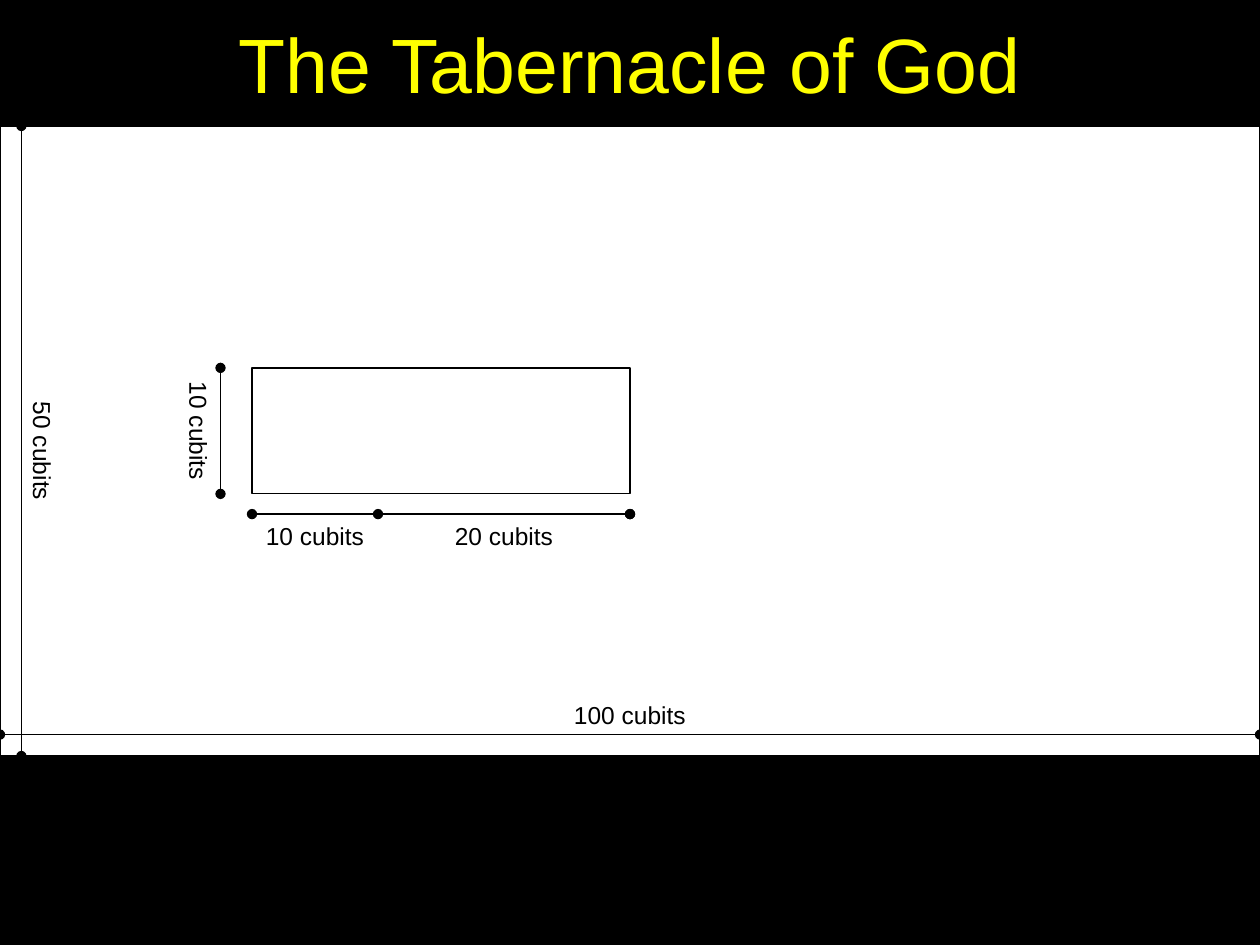
from dataclasses import dataclass

from lxml import etree
from pptx import Presentation
from pptx.dml.color import RGBColor
from pptx.enum.shapes import MSO_CONNECTOR, MSO_SHAPE
from pptx.enum.text import MSO_ANCHOR, PP_ALIGN
from pptx.oxml.ns import qn
from pptx.util import Inches, Pt

RECTANGLE = MSO_SHAPE.RECTANGLE
STRAIGHT = MSO_CONNECTOR.STRAIGHT
CENTER = PP_ALIGN.CENTER
MIDDLE = MSO_ANCHOR.MIDDLE


@dataclass(frozen=True)
class Theme:
    font: str = "Arial"
    background: RGBColor = RGBColor(0, 0, 0)
    ground: RGBColor = RGBColor(255, 255, 255)
    ink: RGBColor = RGBColor(0, 0, 0)
    title: RGBColor = RGBColor(255, 255, 0)
    title_size: int = 44
    label_size: int = 14
    line_width: float = 0.75
    label_height: float = 0.34


class Plan:
    def __init__(self, slide, theme):
        self.slide = slide
        self.theme = theme
        fill = slide.background.fill
        fill.solid()
        fill.fore_color.rgb = theme.background

    def text(self, text, left, top, width, height, size, color, rotation=0):
        sp = self.slide.shapes.add_textbox(
            Inches(left), Inches(top), Inches(width), Inches(height))
        sp.rotation = rotation
        tf = sp.text_frame
        tf.word_wrap = True
        tf.vertical_anchor = MIDDLE
        p = tf.paragraphs[0]
        p.text = text
        p.alignment = CENTER
        p.font.name = self.theme.font
        p.font.size = Pt(size)
        p.font.color.rgb = color

    def title(self, text):
        self.text(text, 0, 0, 10, 1, self.theme.title_size, self.theme.title)

    def label(self, text, center_x, center_y, width=1.0, rotation=0):
        height = self.theme.label_height
        self.text(text, center_x - width / 2, center_y - height / 2,
                  width, height, self.theme.label_size, self.theme.ink, rotation)

    def area(self, left, top, width, height, color=None):
        sp = self.slide.shapes.add_shape(
            RECTANGLE, Inches(left), Inches(top), Inches(width), Inches(height))
        sp.shadow.inherit = False
        if color is None:
            sp.fill.background()
        else:
            sp.fill.solid()
            sp.fill.fore_color.rgb = color
        self.outline(sp.line)

    def outline(self, line):
        line.color.rgb = self.theme.ink
        line.width = Pt(self.theme.line_width)

    def dimension(self, x1, y1, x2, y2):
        line = self.slide.shapes.add_connector(
            STRAIGHT, Inches(x1), Inches(y1), Inches(x2), Inches(y2))
        self.outline(line.line)
        # Round ends, no shadow
        props = line._element.spPr
        ln = props.find(qn("a:ln"))
        for end in ("a:headEnd", "a:tailEnd"):
            etree.SubElement(ln, qn(end), type="oval")
        etree.SubElement(props, qn("a:effectLst"))


def main():
    prs = Presentation()
    prs.slide_width, prs.slide_height = Inches(10), Inches(7.5)
    theme = Theme()
    s = Plan(prs.slides.add_slide(prs.slide_layouts[6]), theme)

    # One inch stands for ten cubits
    court_top, court_bottom = 1, 6
    tent_left, tent_divide, tent_right = 2, 3, 5
    tent_top, tent_bottom = 2.92, 3.92

    # Court and tent
    s.area(0, court_top, 10, court_bottom - court_top, theme.ground)
    s.area(tent_left, tent_top, tent_right - tent_left, tent_bottom - tent_top)
    s.title("The Tabernacle of God")

    # Tent dimensions
    tent_scale = 4.08
    s.dimension(tent_left, tent_scale, tent_right, tent_scale)
    s.dimension(1.75, tent_bottom, 1.75, tent_top)
    s.dimension(tent_divide, tent_scale, tent_right, tent_scale)
    for text, start, end in (("10 cubits", tent_left, tent_divide),
                             ("20 cubits", tent_divide, tent_right)):
        s.label(text, (start + end) / 2, tent_scale + theme.label_height / 2)
    s.label("10 cubits", 1.58, 3.42, rotation=90)

    # Court dimensions
    s.dimension(0, 5.83, 10, 5.83)
    s.label("100 cubits", 5, 5.67, width=10)
    s.label("50 cubits", 0.34, 3.58, rotation=90)
    s.dimension(0.17, court_bottom, 0.17, court_top)

    prs.save("out.pptx")


if __name__ == "__main__":
    main()
